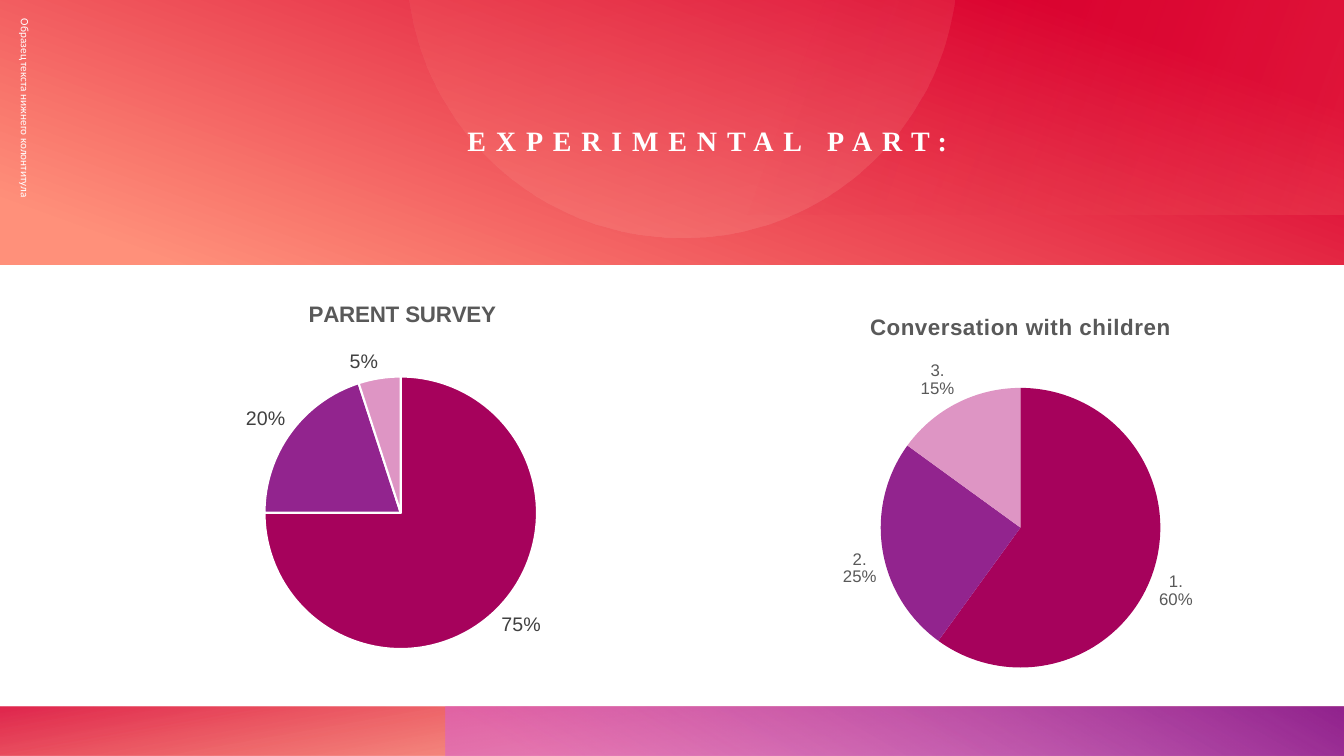
"""Build the "Experimental part" slide with two pie charts."""
from dataclasses import dataclass
from math import asin, cos, pi, sin

from lxml.etree import SubElement
from pptx import Presentation
from pptx.chart.data import CategoryChartData
from pptx.dml.color import RGBColor
from pptx.enum.chart import XL_CHART_TYPE, XL_LABEL_POSITION
from pptx.enum.shapes import MSO_SHAPE
from pptx.enum.text import MSO_ANCHOR, PP_ALIGN
from pptx.oxml import parse_xml
from pptx.oxml.ns import nsdecls, qn
from pptx.util import Pt

COLORS = {
    "white": "FFFFFF", "red": "DA002F", "orange": "FE4A00", "salmon": "FF907A",
    "peach": "FFBCAF", "orchid": "D861D4", "purple": "92248E",
    "berry": "A6025C", "pink": "DE95C4", "dark": "404040", "gray": "595959",
}
SLICE_COLORS = ("berry", "purple", "pink")


@dataclass(frozen=True)
class Stop:
    """A gradient stop, with position and opacity in percent."""
    position: int
    color: str
    opacity: int = 100


@dataclass(frozen=True)
class Band:
    """A rectangle with a gradient fill."""
    left: float
    top: float
    width: float
    height: float
    angle: int
    stops: tuple[Stop, ...]


@dataclass(frozen=True)
class Pie:
    """A pie chart, with its inner layouts as fractions of the frame."""
    title: str
    frame: tuple[float, float, float, float]
    title_layout: tuple[float, float]
    plot_layout: tuple[float, float, float, float]
    categories: tuple[str, ...]
    values: tuple[float, ...]
    label_size: int
    label_color: str
    title_spacing: int = 0
    border: float = 0
    with_category: bool = False


BANDS = (
    Band(0, 504.5, 960, 35.5, 260, (Stop(14, "orange", 28), Stop(100, "red", 85))),
    Band(318, 504.5, 642, 35.5, 300, (Stop(9, "orchid", 55), Stop(99, "purple"))),
    Band(0, 0, 960, 189, 290, (Stop(8, "salmon"), Stop(86, "red"))),
    Band(320, 0, 640, 153.5, 200, (Stop(0, "salmon", 16), Stop(62, "red", 0))),
)
CIRCLE_STOPS = (Stop(0, "salmon", 12), Stop(100, "peach", 20))
PIES = (
    Pie("PARENT SURVEY", (0, 196, 572.5, 301.5), (0.38, 0.05),
        (0.33, 0.22, 0.34, 0.69), ("1", "2", "3"), (0.75, 0.2, 0.05),
        14, "dark", border=1.5),
    Pie("Conversation with children", (552, 206.5, 350.5, 279.5), (0.19, 0.05),
        (0.22, 0.25, 0.57, 0.72), ("1.", "2.", "3."), (60, 25, 15),
        12, "gray", title_spacing=50, with_category=True),
)


def rgb(name: str) -> RGBColor:
    """Return a named colour."""
    return RGBColor.from_string(COLORS[name])


def fill_gradient(shape, stops: tuple[Stop, ...], angle: int) -> None:
    """Give a shape a linear gradient, no line and no shadow."""
    shape.shadow.inherit = False
    shape.line.fill.background()
    stop_xml = "".join(
        f'<a:gs pos="{stop.position * 1000}"><a:srgbClr val="{COLORS[stop.color]}">'
        f'<a:alpha val="{stop.opacity * 1000}"/></a:srgbClr></a:gs>'
        for stop in stops)
    gradient = parse_xml(
        f'<a:gradFill {nsdecls("a")} rotWithShape="1"><a:gsLst>{stop_xml}</a:gsLst>'
        f'<a:lin ang="{angle * 60000}" scaled="0"/></a:gradFill>')
    shape.element.spPr.find(qn("a:ln")).addprevious(gradient)


def add_band(slide, band: Band) -> None:
    """Draw a gradient rectangle."""
    shape = slide.shapes.add_shape(MSO_SHAPE.RECTANGLE, Pt(band.left), Pt(band.top),
                                   Pt(band.width), Pt(band.height))
    fill_gradient(shape, band.stops, band.angle)


def add_circle_segment(slide, center_x: float, center_y: float, radius: float) -> None:
    """Draw the part of a circle that lies below the top edge."""
    start = asin(-center_y / radius)
    steps = 90
    angles = [start + (pi - 2 * start) * step / steps for step in range(steps + 1)]
    points = [(Pt(center_x + radius * cos(angle)), Pt(center_y + radius * sin(angle)))
              for angle in angles]
    builder = slide.shapes.build_freeform(*points[0])
    builder.add_line_segments(points[1:], close=True)
    fill_gradient(builder.convert_to_shape(), CIRCLE_STOPS, 77)


def add_run(paragraph, text: str, font_name: str, size: float, color: str,
            bold: bool = False, spacing: int = 0) -> None:
    """Add a formatted run, with spacing in hundredths of a point."""
    run = paragraph.add_run()
    run.text = text
    run.font.name = font_name
    run.font.size = Pt(size)
    run.font.bold = bold
    run.font.color.rgb = rgb(color)
    if spacing:
        run.font._element.set("spc", str(spacing))


def format_title(slide) -> None:
    """Place the title in front of the banner and write it."""
    title = slide.shapes.title
    title.element.getparent().append(title.element)
    title.left, title.top, title.width, title.height = Pt(102), Pt(15), Pt(806.5), Pt(97.5)
    frame = title.text_frame
    frame.margin_left = frame.margin_right = frame.margin_top = frame.margin_bottom = 0
    frame.vertical_anchor = MSO_ANCHOR.BOTTOM
    paragraph = frame.paragraphs[0]
    paragraph.alignment = PP_ALIGN.CENTER
    add_run(paragraph, "EXPERIMENTAL PART:", "Times New Roman", 20, "white", True, 700)


def add_footer(slide) -> None:
    """Write the rotated footer along the left edge."""
    box = slide.shapes.add_textbox(Pt(-144), Pt(150.5), Pt(324), Pt(36))
    box.rotation = 90
    box.text_frame.word_wrap = True
    box.text_frame.vertical_anchor = MSO_ANCHOR.MIDDLE
    add_run(box.text_frame.paragraphs[0], "Образец текста нижнего колонтитула",
            "Calibri", 8, "white")


def set_layout(element, values: tuple[float, ...], inner: bool = False) -> None:
    """Place a chart title or plot area by fractions of the chart."""
    for existing in element.findall(qn("c:layout")):
        element.remove(existing)
    layout = parse_xml(f'<c:layout {nsdecls("c")}/>')
    manual = SubElement(layout, qn("c:manualLayout"))
    settings = [("layoutTarget", "inner")] if inner else []
    settings += [("xMode", "edge"), ("yMode", "edge")]
    settings += list(zip("xywh", map(str, values)))
    for name, value in settings:
        SubElement(manual, qn(f"c:{name}")).set("val", value)
    element.insert(0 if inner else 1, layout)


def add_pie(slide, pie: Pie) -> None:
    """Draw a pie chart with a title and outside labels."""
    data = CategoryChartData(number_format="General" if pie.with_category else "0%")
    data.categories = pie.categories
    data.add_series("Series 1", pie.values)
    chart = slide.shapes.add_chart(XL_CHART_TYPE.PIE, *map(Pt, pie.frame), data).chart
    chart.font.name, chart.font.size = "Arial", Pt(10)
    chart.has_legend = False
    chart.has_title = True
    add_run(chart.chart_title.text_frame.paragraphs[0], pie.title, "Arial", 16,
            "gray", True, pie.title_spacing)
    set_layout(chart.chart_title._element, pie.title_layout)
    set_layout(chart._chartSpace.chart.plotArea, pie.plot_layout, True)
    plot = chart.plots[0]
    plot.vary_by_categories = True
    for index, color in enumerate(SLICE_COLORS):
        slice_format = plot.series[0].points[index].format
        slice_format.fill.solid()
        slice_format.fill.fore_color.rgb = rgb(color)
        if pie.border:
            slice_format.line.color.rgb = rgb("white")
            slice_format.line.width = Pt(pie.border)
        else:
            slice_format.line.fill.background()
    labels = plot.series[0].data_labels
    labels.font.name, labels.font.size = "Arial", Pt(pie.label_size)
    labels.font.color.rgb = rgb(pie.label_color)
    labels.number_format, labels.number_format_is_linked = "0%", False
    labels.position = XL_LABEL_POSITION.OUTSIDE_END
    labels.show_value = not pie.with_category
    labels.show_percentage = labels.show_category_name = pie.with_category
    if pie.with_category:
        separator = parse_xml(f'<c:separator {nsdecls("c")}>\n</c:separator>')
        labels._element.find(qn("c:showBubbleSize")).addnext(separator)


def main() -> None:
    """Build and save the presentation."""
    presentation = Presentation()
    presentation.slide_width, presentation.slide_height = Pt(960), Pt(540)
    slide = presentation.slides.add_slide(presentation.slide_layouts[5])
    for band in BANDS[:3]:
        add_band(slide, band)
    add_circle_segment(slide, 487, -27, 196.5)
    add_band(slide, BANDS[3])
    format_title(slide)
    add_footer(slide)
    for pie in PIES:
        add_pie(slide, pie)
    presentation.save("out.pptx")


if __name__ == "__main__":
    main()
